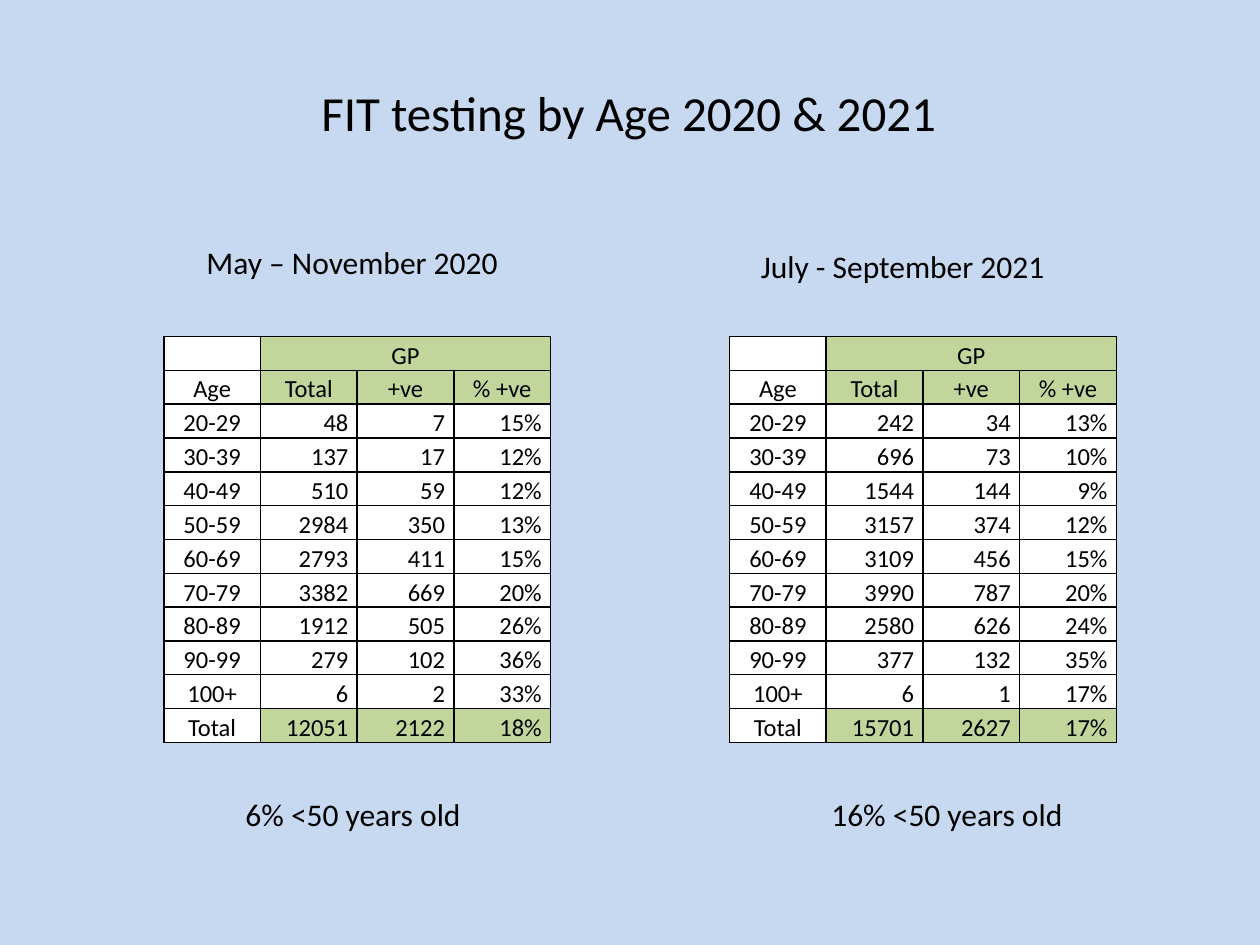
from lxml.etree import SubElement
from pptx import Presentation
from pptx.dml.color import RGBColor
from pptx.enum.text import MSO_ANCHOR, MSO_AUTO_SIZE, PP_ALIGN
from pptx.oxml.ns import qn
from pptx.util import Inches, Pt

BLACK = RGBColor(0x00, 0x00, 0x00)
WHITE = RGBColor(0xFF, 0xFF, 0xFF)
GREEN = RGBColor(0xC2, 0xD6, 0x9B)
PALE_BLUE = RGBColor(0xC6, 0xD9, 0xF1)

HEADER_ROWS = [("", "GP", "", ""), ("Age", "Total", "+ve", "% +ve")]
AGE_LABELS = [f"{age}-{age + 9}" for age in range(20, 100, 10)] + ["100+", "Total"]
RESULTS_2020 = [
    ("48", "7", "15%"), ("137", "17", "12%"), ("510", "59", "12%"),
    ("2984", "350", "13%"), ("2793", "411", "15%"), ("3382", "669", "20%"),
    ("1912", "505", "26%"), ("279", "102", "36%"), ("6", "2", "33%"),
    ("12051", "2122", "18%"),
]
RESULTS_2021 = [
    ("242", "34", "13%"), ("696", "73", "10%"), ("1544", "144", "9%"),
    ("3157", "374", "12%"), ("3109", "456", "15%"), ("3990", "787", "20%"),
    ("2580", "626", "24%"), ("377", "132", "35%"), ("6", "1", "17%"),
    ("15701", "2627", "17%"),
]


class SlideBuilder:
    """Holds the text style and the current slide, and adds its elements."""

    font_name = "Calibri"
    label_size = 18
    title_size = 28
    cell_size = 14

    def __init__(self, slide):
        self.slide = slide

    def background(self, color):
        fill = self.slide.background.fill
        fill.solid()
        fill.fore_color.rgb = color

    def format_runs(self, paragraph, size):
        for run in paragraph.runs:
            run.font.name = self.font_name
            run.font.size = Pt(size)
            run.font.color.rgb = BLACK

    def fit_text(self, shape, text, size):
        text_frame = shape.text_frame
        text_frame.text = text
        text_frame.word_wrap = False
        text_frame.auto_size = MSO_AUTO_SIZE.SHAPE_TO_FIT_TEXT
        paragraph = text_frame.paragraphs[0]
        paragraph.alignment = PP_ALIGN.LEFT
        self.format_runs(paragraph, size)

    def title(self, text, left, top, width, height):
        title = self.slide.shapes.title
        title.left, title.top = Inches(left), Inches(top)
        title.width, title.height = Inches(width), Inches(height)
        self.fit_text(title, text, self.title_size)

    def label(self, text, left, top, width):
        box = self.slide.shapes.add_textbox(
            Inches(left), Inches(top), Inches(width), Inches(0.4))
        self.fit_text(box, text, self.label_size)

    def border(self, cell):
        properties = cell._tc.get_or_add_tcPr()
        for side in ("lnL", "lnR", "lnT", "lnB"):
            line = SubElement(properties, qn(f"a:{side}"), w=str(Pt(1)))
            fill = SubElement(line, qn("a:solidFill"))
            SubElement(fill, qn("a:srgbClr"), val=str(BLACK))

    def cell(self, cell, text, alignment, anchor, color):
        cell.margin_left = cell.margin_right = Inches(0.07)
        cell.margin_top = cell.margin_bottom = 0
        cell.vertical_anchor = anchor
        self.border(cell)
        cell.fill.solid()
        cell.fill.fore_color.rgb = color
        paragraph = cell.text_frame.paragraphs[0]
        paragraph.text = text
        paragraph.alignment = alignment
        paragraph.line_spacing = 1.15
        self.format_runs(paragraph, self.cell_size)
        if not text:
            SubElement(paragraph._p, qn("a:endParaRPr"), sz=str(self.cell_size * 100))

    def results_table(self, results, left, top):
        rows = HEADER_ROWS + [(age, *values) for age, values in zip(AGE_LABELS, results)]
        table = self.slide.shapes.add_table(
            len(rows), 4, Inches(left), Inches(top), Inches(3.07), Inches(3.22)).table
        table.first_row = table.horz_banding = False
        for row_index, values in enumerate(rows):
            is_header = row_index < len(HEADER_ROWS)
            is_total = row_index == len(rows) - 1
            anchor = MSO_ANCHOR.BOTTOM if is_header else MSO_ANCHOR.TOP
            for column_index, text in enumerate(values):
                is_age = column_index == 0
                alignment = PP_ALIGN.CENTER if is_header or is_age else PP_ALIGN.RIGHT
                color = GREEN if (is_header or is_total) and not is_age else WHITE
                self.cell(table.cell(row_index, column_index), text, alignment, anchor, color)
        table.cell(0, 1).merge(table.cell(0, 3))


def main():
    presentation = Presentation()
    presentation.slide_width = Inches(10)
    presentation.slide_height = Inches(7.5)
    builder = SlideBuilder(presentation.slides.add_slide(presentation.slide_layouts[5]))
    builder.background(PALE_BLUE)
    builder.title("FIT testing by Age 2020 & 2021", 2.45, 0.6, 5.14, 0.57)
    builder.results_table(RESULTS_2020, 1.3, 2.67)
    builder.results_table(RESULTS_2021, 5.79, 2.67)
    builder.label("May – November 2020", 1.54, 1.88, 2.54)
    builder.label("July - September 2021", 5.94, 1.91, 2.48)
    builder.label("6% <50 years old", 1.85, 6.26, 1.93)
    builder.label("16% <50 years old", 6.5, 6.26, 2.06)
    presentation.save("out.pptx")


if __name__ == "__main__":
    main()
